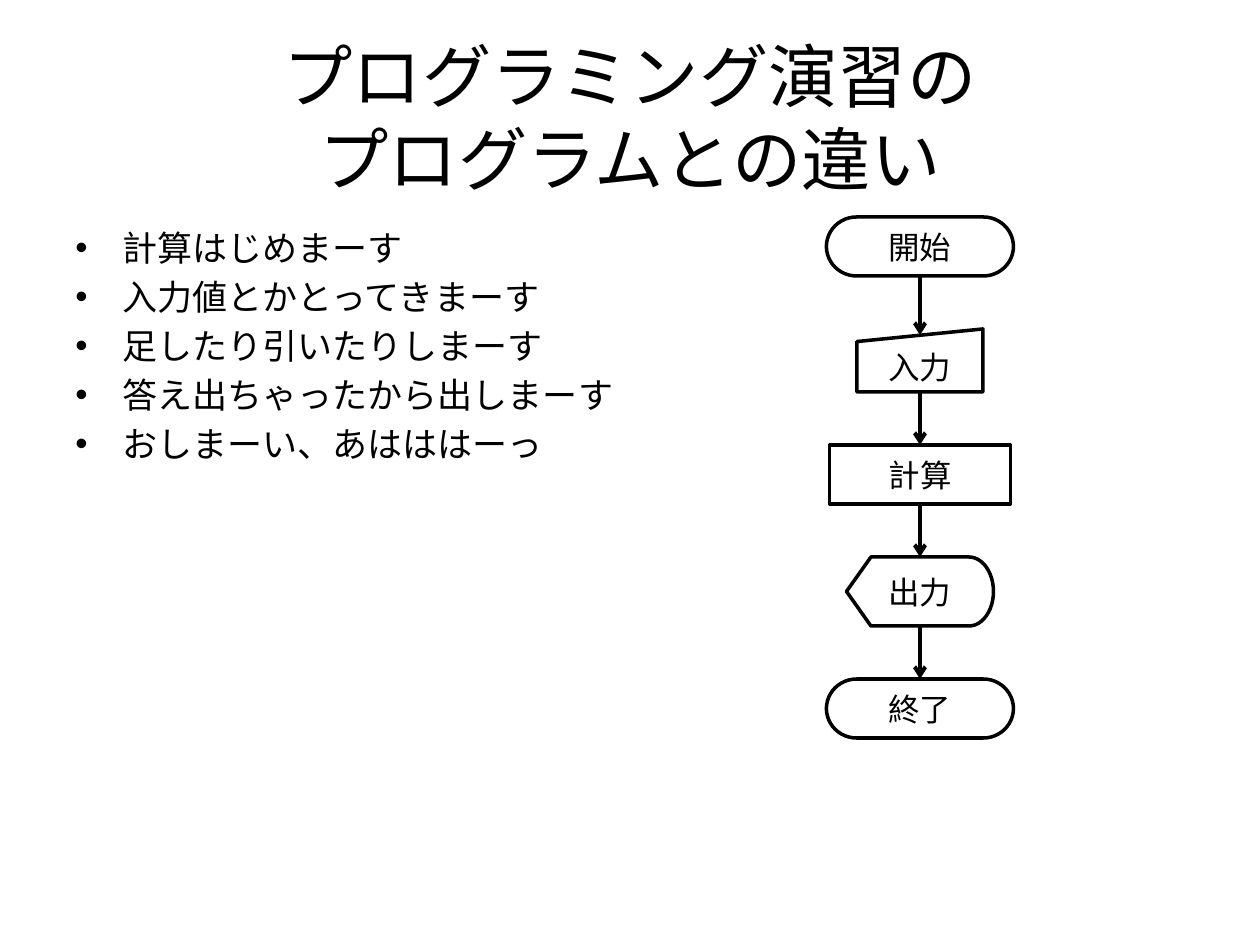
"""Build a slide that sets a list of program steps beside its flowchart."""
from dataclasses import dataclass

from lxml.etree import SubElement
from pptx import Presentation
from pptx.dml.color import RGBColor
from pptx.enum.shapes import MSO_CONNECTOR, MSO_SHAPE
from pptx.enum.text import MSO_ANCHOR, PP_ALIGN
from pptx.oxml.ns import qn
from pptx.util import Emu, Pt

TITLE = "プログラミング演習の\vプログラムとの違い"
STEPS = [
    "計算はじめまーす",
    "入力値とかとってきまーす",
    "足したり引いたりしまーす",
    "答え出ちゃったから出しまーす",
    "おしまーい、あはははーっ",
]
FLOW = [
    ("開始", MSO_SHAPE.FLOWCHART_TERMINATOR, 187, 59, 0),
    ("入力", MSO_SHAPE.FLOWCHART_MANUAL_INPUT, 126, 63, 6),
    ("計算", MSO_SHAPE.FLOWCHART_PROCESS, 181, 59, 0),
    ("出力", MSO_SHAPE.FLOWCHART_DISPLAY, 147, 69, 0),
    ("終了", MSO_SHAPE.FLOWCHART_TERMINATOR, 187, 59, 0),
]
FLOW_CENTER, FLOW_TOP, FLOW_GAP = 920, 217, 53


@dataclass(frozen=True)
class Theme:
    ink: RGBColor = RGBColor(0, 0, 0)
    paper: RGBColor = RGBColor(255, 255, 255)
    japanese: str = "Noto Sans CJK JP"
    latin: str = "Calibri"
    title: float = 39.6
    body: int = 20
    node: int = 18
    outline: int = 2
    arrow: float = 2.25


THEME = Theme()


def px(length):
    return Emu(round(length * 914400 / 126))


def apply(target, formats):
    for attribute, value in formats.items():
        setattr(target, attribute, value)


def style_paragraph(paragraph, size, face, **formats):
    apply(paragraph, formats)
    for run in paragraph.runs:
        apply(run.font, {"size": Pt(size), "name": face})
        run.font.color.rgb = THEME.ink
        SubElement(run.font._element, qn("a:ea"), typeface=THEME.japanese)


def add_title(slide):
    frame = slide.shapes.add_textbox(px(63), px(38), px(1134), px(157)).text_frame
    apply(frame, {"word_wrap": True, "vertical_anchor": MSO_ANCHOR.MIDDLE,
                  "text": TITLE})
    style_paragraph(frame.paragraphs[0], THEME.title, THEME.japanese,
                    alignment=PP_ALIGN.CENTER)


def add_steps(slide):
    frame = slide.shapes.add_textbox(px(63), px(220), px(606), px(624)).text_frame
    apply(frame, {"word_wrap": True, "text": "\n".join(STEPS)})
    for paragraph in frame.paragraphs:
        style_paragraph(paragraph, THEME.body, THEME.japanese,
                        space_after=Pt(THEME.body / 5))
        properties = paragraph._p.get_or_add_pPr()
        properties.set("marL", str(px(47)))
        properties.set("indent", str(px(-47)))
        SubElement(properties, qn("a:buFont"), typeface="Arial")
        SubElement(properties, qn("a:buChar"), char="•")


def add_node(slide, label, outline, top, width, height):
    node = slide.shapes.add_shape(outline, px(FLOW_CENTER - width / 2), px(top),
                                  px(width), px(height))
    node.shadow.inherit = False
    node.fill.background()
    node.line.color.rgb = THEME.ink
    node.line.width = Pt(THEME.outline)
    apply(node.text_frame, {"word_wrap": False, "text": label,
                            "vertical_anchor": MSO_ANCHOR.MIDDLE})
    style_paragraph(node.text_frame.paragraphs[0], THEME.node, THEME.latin,
                    alignment=PP_ALIGN.CENTER)


def add_arrow(slide, start, end):
    arrow = slide.shapes.add_connector(MSO_CONNECTOR.STRAIGHT, px(FLOW_CENTER),
                                       px(start), px(FLOW_CENTER), px(end))
    arrow.line.color.rgb = THEME.ink
    arrow.line.width = Pt(THEME.arrow)
    SubElement(arrow.line._get_or_add_ln(), qn("a:tailEnd"), type="arrow")
    SubElement(arrow._element.spPr, qn("a:effectLst"))


def add_flow(slide):
    top = FLOW_TOP
    for index, (label, outline, width, height, slant) in enumerate(FLOW):
        add_node(slide, label, outline, top, width, height)
        if index:
            add_arrow(slide, top - FLOW_GAP, top + slant)
        top += height + FLOW_GAP


def main():
    deck = Presentation()
    apply(deck, {"slide_width": px(1260), "slide_height": px(945)})
    slide = deck.slides.add_slide(deck.slide_layouts[6])
    slide.background.fill.solid()
    slide.background.fill.fore_color.rgb = THEME.paper
    add_title(slide)
    add_steps(slide)
    add_flow(slide)
    deck.save("out.pptx")


if __name__ == "__main__":
    main()
